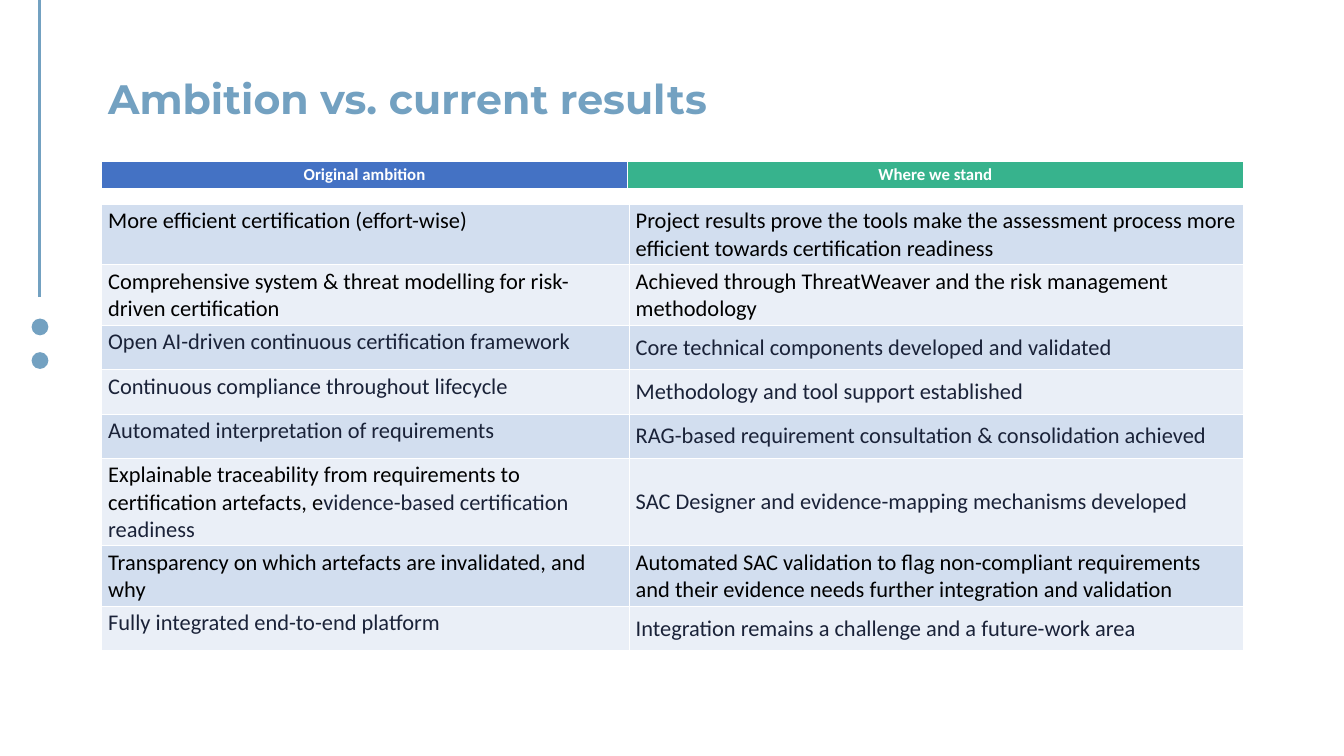
"""Build the slide comparing the original ambition with current results."""
from dataclasses import dataclass
from typing import NamedTuple

from lxml.etree import SubElement
from pptx import Presentation
from pptx.dml.color import RGBColor
from pptx.enum.shapes import MSO_CONNECTOR as Connector, MSO_SHAPE as Preset
from pptx.enum.text import MSO_ANCHOR as Anchor, MSO_AUTO_SIZE as AutoSize, PP_ALIGN as Align
from pptx.oxml.ns import qn
from pptx.util import Inches, Pt


@dataclass(frozen=True)
class Theme:
    accent: str = "73A1C1"
    black: str = "000000"
    navy: str = "1A2238"
    white: str = "FFFFFF"
    ambition: str = "4472C4"
    status: str = "37B38D"
    bands: tuple = ("D2DEEF", "EAEFF7")
    title_font: str = "Montserrat"
    body_font: str = "Calibri"
    title_size: int = 44
    header_size: int = 18
    body_size: int = 24


THEME = Theme()


class Span(NamedTuple):
    text: str
    color: str


class Comparison(NamedTuple):
    height: float
    ambition: tuple
    status: Span


def comparison(height: float, ambition: str, status: str, color: str = THEME.navy) -> Comparison:
    return Comparison(height, (Span(ambition, color),), Span(status, color))


COMPARISONS = [
    comparison(0.7, "More efficient certification (effort-wise)",
               "Project results prove the tools make the assessment process more efficient "
               "towards certification readiness", THEME.black),
    comparison(0.7, "Comprehensive system & threat modelling for risk-driven certification",
               "Achieved through ThreatWeaver and the risk management methodology", THEME.black),
    comparison(0.66, "Open AI-driven continuous certification framework",
               "Core technical components developed and validated"),
    comparison(0.66, "Continuous compliance throughout lifecycle",
               "Methodology and tool support established"),
    comparison(0.66, "Automated interpretation of requirements",
               "RAG-based requirement consultation & consolidation achieved"),
    Comparison(1.01,
               (Span("Explainable traceability from requirements to certification artefacts, e",
                     THEME.black),
                Span("vidence-based certification readiness", THEME.navy)),
               Span("SAC Designer and evidence-mapping mechanisms developed", THEME.navy)),
    comparison(0.66, "Transparency on which artefacts are invalidated, and why",
               "Automated SAC validation to flag non-compliant requirements and their evidence "
               "needs further integration and validation", THEME.black),
    comparison(0.66, "Fully integrated end-to-end platform",
               "Integration remains a challenge and a future-work area"),
]


def rgb(color: str) -> RGBColor:
    return RGBColor.from_string(color)


def write(frame, spans, font: str, size: int, bold: bool = False) -> None:
    paragraph = frame.paragraphs[0]
    for span in spans:
        run = paragraph.add_run()
        run.text = span.text
        run.font.name = font
        run.font.size = Pt(size)
        run.font.bold = bold
        run.font.color.rgb = rgb(span.color)


def style_cell(cell, fill: str, bottom: float = 1) -> None:
    properties = cell._tc.get_or_add_tcPr()
    for side, width in (("L", 1), ("R", 1), ("T", 1), ("B", bottom)):
        border = SubElement(properties, qn(f"a:ln{side}"), w=str(Pt(width)))
        paint = SubElement(border, qn("a:solidFill"))
        SubElement(paint, qn("a:srgbClr"), val=THEME.white)
    cell.fill.solid()
    cell.fill.fore_color.rgb = rgb(fill)


def add_grid(slide, top: float, widths, heights):
    grid = slide.shapes.add_table(len(heights), len(widths), Inches(1.51), Inches(top),
                                  Inches(sum(widths)), Inches(sum(heights))).table
    grid.first_row = grid.horz_banding = False
    for column, width in zip(grid.columns, widths):
        column.width = Inches(width)
    for row, height in zip(grid.rows, heights):
        row.height = Inches(height)
    return grid


def add_title(slide) -> None:
    title = slide.shapes.add_textbox(Inches(1.51), Inches(1.05), Inches(17.49), Inches(0.84))
    title.text_frame.word_wrap = True
    title.text_frame.auto_size = AutoSize.SHAPE_TO_FIT_TEXT
    write(title.text_frame, [Span("Ambition vs. current results", THEME.accent)],
          THEME.title_font, THEME.title_size, bold=True)


def add_side_ornament(slide) -> None:
    ornament = slide.shapes.add_group_shape().shapes
    stem = ornament.add_connector(Connector.STRAIGHT, Inches(0.59), Inches(4.42), Inches(0.59), 0)
    stem.line.color.rgb = rgb(THEME.accent)
    stem.line.width = Pt(3)
    SubElement(stem._element.spPr, qn("a:effectLst"))
    for top in (4.74, 5.24):
        dot = ornament.add_shape(Preset.OVAL, Inches(0.47), Inches(top), Inches(0.25), Inches(0.25))
        dot.shadow.inherit = False
        dot.fill.solid()
        dot.fill.fore_color.rgb = rgb(THEME.accent)
        dot.line.fill.background()


def add_comparisons(slide) -> None:
    grid = add_grid(slide, 3.04, (7.85, 9.14), [entry.height for entry in COMPARISONS])
    for index, entry in enumerate(COMPARISONS):
        ambition, status = grid.rows[index].cells
        for cell, spans in ((ambition, entry.ambition), (status, (entry.status,))):
            style_cell(cell, THEME.bands[index % 2])
            write(cell.text_frame, spans, THEME.body_font, THEME.body_size)
        status.vertical_anchor = Anchor.MIDDLE


def add_headings(slide) -> None:
    grid = add_grid(slide, 2.4, (7.83, 9.16), (0.41,))
    headings = (("Original ambition", THEME.ambition), ("Where we stand", THEME.status))
    for cell, (heading, fill) in zip(grid.rows[0].cells, headings):
        style_cell(cell, fill, bottom=3)
        write(cell.text_frame, [Span(heading, THEME.white)],
              THEME.body_font, THEME.header_size, bold=True)
        cell.text_frame.paragraphs[0].alignment = Align.CENTER


def main() -> None:
    deck = Presentation()
    deck.slide_width, deck.slide_height = Inches(20), Inches(11.25)
    slide = deck.slides.add_slide(deck.slide_layouts[6])
    add_title(slide)
    add_side_ornament(slide)
    add_comparisons(slide)
    add_headings(slide)
    deck.save("out.pptx")


if __name__ == "__main__":
    main()
